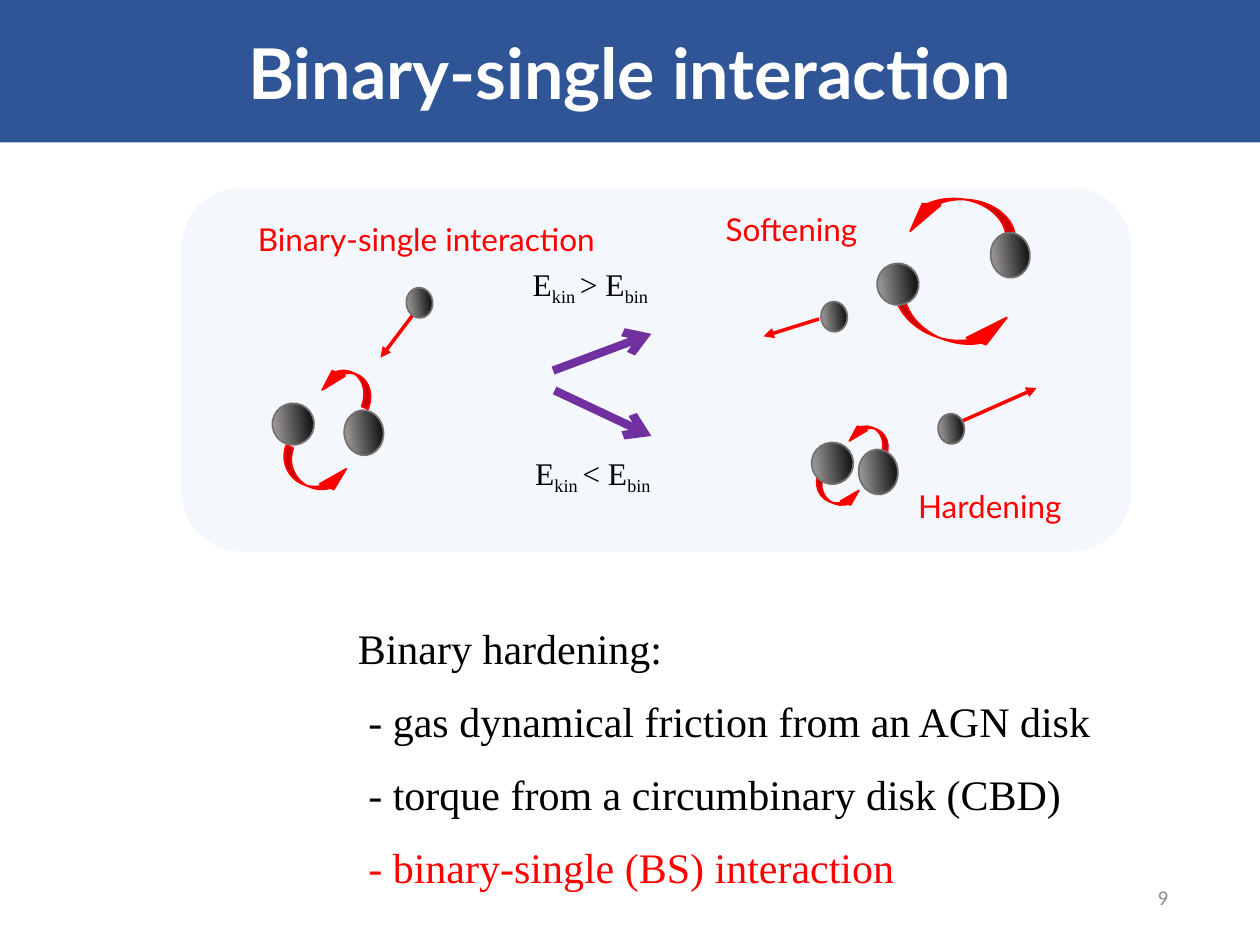
"""Build a slide on binary-single interaction with a scattering diagram."""
from lxml import etree
from pptx import Presentation
from pptx.dml.color import RGBColor
from pptx.enum.shapes import MSO_CONNECTOR, MSO_SHAPE
from pptx.enum.text import MSO_ANCHOR, MSO_AUTO_SIZE, PP_ALIGN
from pptx.oxml.ns import qn
from pptx.util import Cm, Pt

LINE = MSO_CONNECTOR.STRAIGHT
ROUND, OVAL, CURVE = MSO_SHAPE.ROUNDED_RECTANGLE, MSO_SHAPE.OVAL, MSO_SHAPE.CURVED_UP_ARROW
MIDDLE, FIXED, GROW = MSO_ANCHOR.MIDDLE, MSO_AUTO_SIZE.NONE, MSO_AUTO_SIZE.SHAPE_TO_FIT_TEXT
LEFT, CENTER, RIGHT = PP_ALIGN.LEFT, PP_ALIGN.CENTER, PP_ALIGN.RIGHT

BLACK = RGBColor(0x00, 0x00, 0x00)
WHITE = RGBColor(0xFF, 0xFF, 0xFF)
RED = RGBColor(0xFF, 0x00, 0x00)
NAVY = RGBColor(0x2F, 0x55, 0x97)
BLUE = RGBColor(0x2E, 0x75, 0xB6)
VIOLET = RGBColor(0x70, 0x30, 0xA0)
SILVER = RGBColor(0xAF, 0xAB, 0xAB)
EDGE = RGBColor(0x76, 0x71, 0x71)
GREY = RGBColor(0x8C, 0x8C, 0x8C)
SERIF, SANS = "Times New Roman", "Lato"


def place(shape, *box):
    for name, size in zip(("left", "top", "width", "height"), box):
        setattr(shape, name, Cm(size))


def write(para, text, color, align=LEFT, **look):
    para.alignment = align
    run = para.add_run()
    run.text = text
    for name, value in look.items():
        setattr(run.font, name, value)
    run.font.color.rgb = color
    return run


deck = Presentation()
deck.slide_width, deck.slide_height = Cm(25.4), Cm(19.05)
slide = deck.slides.add_slide(deck.slide_layouts[1])
shapes = slide.shapes

title = shapes.title
place(title, 0, 0, 25.4, 2.87)
title.fill.solid()
title.fill.fore_color.rgb = NAVY
title.text_frame.vertical_anchor = MIDDLE
title.text_frame.auto_size = FIXED
write(title.text_frame.paragraphs[0], "Binary-single interaction", WHITE, CENTER,
      size=Pt(40), name=SANS, bold=True)

body = slide.placeholders[1]
place(body, 6.96, 12.32, 15.82, 6.55)
frame = body.text_frame
frame.auto_size = FIXED
points = [
    ("Binary hardening:", BLACK),
    (" - gas dynamical friction from an AGN disk", BLACK),
    (" - torque from a circumbinary disk (CBD)", BLACK),
    (" - binary-single (BS) interaction", RED),
]
for row, (text, color) in enumerate(points):
    para = frame.add_paragraph() if row else frame.paragraphs[0]
    para.line_spacing, para.space_before = 1.1, Pt(10)
    write(para, text, color, size=Pt(24), name=SERIF)
    props = para._p.get_or_add_pPr()
    props.set("marL", "0")
    props.set("indent", "0")
    etree.SubElement(props, qn("a:buNone"))

panel = shapes.add_shape(ROUND, Cm(3.66), Cm(3.78), Cm(19.15), Cm(7.34))
panel.shadow.inherit = False
panel.fill.solid()
panel.fill.fore_color.rgb = BLUE
panel.line.fill.background()
tint = panel._element.spPr.find(".//" + qn("a:srgbClr"))
etree.SubElement(tint, qn("a:alpha"), val="5000")

orbits = [
    (17.86, 6.02, 2.57, 0.84, 19.4),
    (18.19, 4.01, 2.31, 0.74, 185.1),
    (5.61, 9.22, 1.45, 0.61, 21.6),
    (6.43, 7.49, 1.14, 0.56, 202.7),
    (16.38, 9.73, 0.99, 0.43, 21.6),
    (17.07, 8.61, 0.91, 0.43, 202.7),
]
for *box, turn in orbits:
    orbit = shapes.add_shape(CURVE, *map(Cm, box))
    orbit.rotation = turn
    orbit.shadow.inherit = False
    for slot, value in enumerate((0.25, 0.5, 0.782)):
        orbit.adjustments[slot] = value
    orbit.fill.solid()
    orbit.fill.fore_color.rgb = orbit.line.color.rgb = RED
    orbit.line.width = Pt(1)

paths = [
    ((16.51, 6.43, 15.39, 6.78), RED, 2, "triangle"),
    ((8.36, 6.3, 7.67, 7.21), RED, 2, "triangle"),
    ((19.3, 8.53, 20.9, 7.82), RED, 2, "triangle"),
    ((11.15, 7.47, 13.13, 6.73), VIOLET, 4.75, "arrow"),
    ((11.18, 7.87, 13.13, 8.79), VIOLET, 4.75, "arrow"),
]
for ends, color, width, head in paths:
    arrow = shapes.add_connector(LINE, *map(Cm, ends))
    arrow.line.color.rgb = color
    arrow.line.width = Pt(width)
    etree.SubElement(arrow.line._get_or_add_ln(), qn("a:tailEnd"), type=head)
    etree.SubElement(arrow._element.spPr, qn("a:effectLst"))

bodies = {
    (0.91, 0.79): [(6.88, 8.33), (19.91, 4.75), (17.25, 9.12)],
    (0.84, 0.84): [(5.49, 8.13), (17.68, 5.31), (16.36, 8.92)],
    (0.61, 0.53): [(8.15, 5.84), (16.51, 6.12), (18.87, 8.38)],
}
for size, spots in bodies.items():
    for spot in spots:
        ball = shapes.add_shape(OVAL, *map(Cm, spot + size))
        ball.rotation = 84
        ball.shadow.inherit = False
        ball.fill.gradient()
        ball.fill.gradient_angle = 270
        for stop, color in zip(ball.fill.gradient_stops, (BLACK, SILVER)):
            stop.color.rgb = color
        ball.line.color.rgb = EDGE
        ball.line.width = Pt(1)

labels = [
    ((10.49, 5.21, 3.12), ["E", "kin ", "> E", "bin"], SERIF, BLACK),
    ((10.54, 9.02, 3.12), ["E", "kin ", "< E", "bin"], SERIF, BLACK),
    ((4.95, 4.32, 7.39), ["Binary-single interaction"], SANS, RED),
    ((14.38, 4.11, 3.23), ["Softening"], SANS, RED),
    ((18.26, 9.7, 3.48), ["Hardening"], SANS, RED),
]
for box, parts, face, color in labels:
    label = shapes.add_textbox(*map(Cm, box), Cm(1.02)).text_frame
    label.word_wrap, label.auto_size = False, GROW
    for order, part in enumerate(parts):
        run = write(label.paragraphs[0], part, color, size=Pt(18), name=face)
        if order % 2:
            run._r.get_or_add_rPr().set("baseline", "-25000")

number = shapes.add_textbox(Cm(18.08), Cm(17.58), Cm(5.72), Cm(1.02)).text_frame
number.word_wrap, number.vertical_anchor = True, MIDDLE
write(number.paragraphs[0], "9", GREY, RIGHT, size=Pt(12), name="Calibri")

deck.save("out.pptx")
